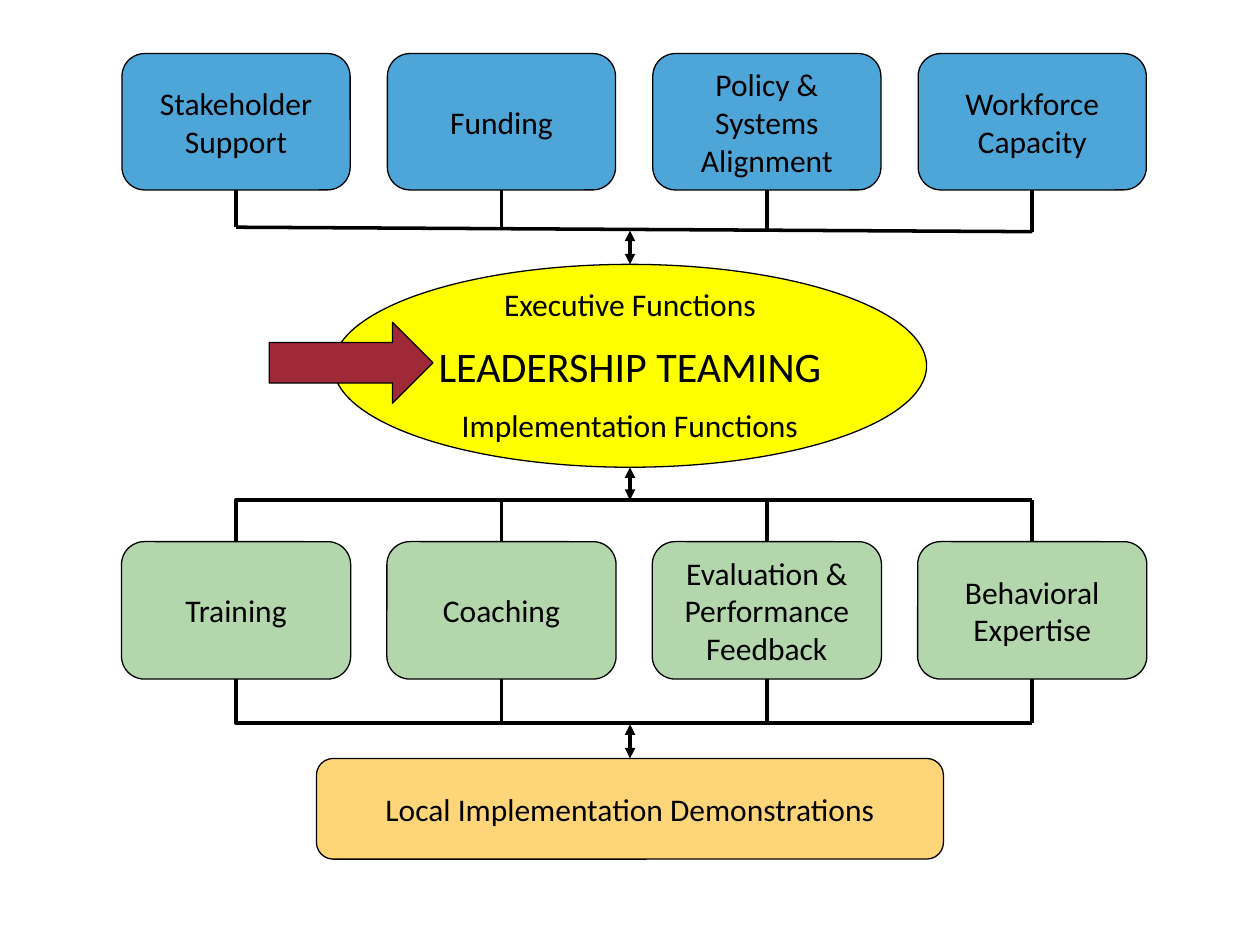
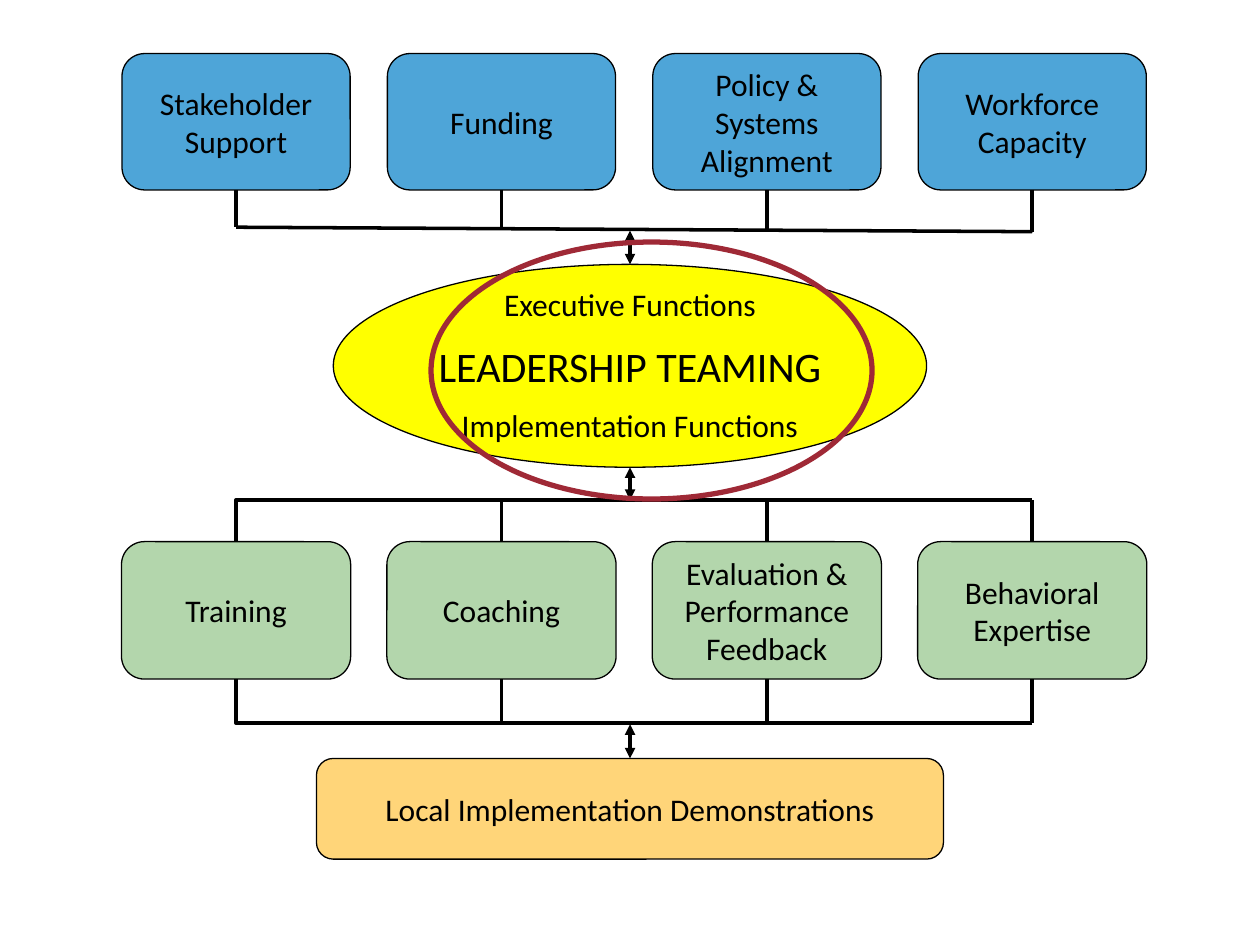
import dataclasses
import typing

import lxml.etree
import pptx
import pptx.dml.color
import pptx.enum.shapes
import pptx.enum.text
import pptx.oxml.ns
import pptx.util

Cm = pptx.util.Cm
Pt = pptx.util.Pt
Color = pptx.dml.color.RGBColor
Kind = pptx.enum.shapes.MSO_SHAPE
Link = pptx.enum.shapes.MSO_CONNECTOR
qn = pptx.oxml.ns.qn

BLACK = Color(0x00, 0x00, 0x00)
BLUE = Color(0x4E, 0xA5, 0xD8)
GREEN = Color(0xB3, 0xD6, 0xAC)
YELLOW = Color(0xFF, 0xFF, 0x00)
GOLD = Color(0xFF, 0xD5, 0x79)
RED = Color(0x9F, 0x29, 0x36)

FONT = "Calibri"
PITCH = 5.35
MID = 12.7
TOP, BOTTOM = 0, 2
FIRST_BUS = 4.58
TILT = 0.03
UPPER_BUS = 10.08
LOWER_BUS = 14.58


@dataclasses.dataclass(frozen=True)
class Box:
    left: float
    top: float
    width: float
    height: float
    kind: typing.Any = Kind.ROUNDED_RECTANGLE
    text: str = ""
    fill: typing.Optional[Color] = None
    line: typing.Optional[Color] = BLACK
    weight: float = 0.75
    size: int = 18


@dataclasses.dataclass(frozen=True)
class Row:
    left: float
    top: float
    width: float
    height: float
    fill: Color
    labels: typing.Tuple[str, ...]

    def boxes(self) -> typing.List[Box]:
        return [
            Box(self.left + PITCH * col, self.top, self.width, self.height,
                text=label, fill=self.fill)
            for col, label in enumerate(self.labels)
        ]


DRIVERS = Row(2.46, 1.08, 4.6, 2.75, BLUE, (
    "Stakeholder Support", "Funding",
    "Policy & Systems Alignment", "Workforce Capacity"))
SKILLS = Row(2.45, 10.92, 4.62, 2.77, GREEN, (
    "Training", "Coaching",
    "Evaluation & Performance Feedback", "Behavioral Expertise"))
TEAM = Box(6.72, 5.33, 11.96, 4.09, Kind.OVAL, "LEADERSHIP TEAMING",
           YELLOW, size=24)
LOCAL = Box(6.38, 15.29, 12.64, 2.03,
            text="Local Implementation Demonstrations", fill=GOLD)
ROLES = [
    Box(7.43, top, 10.54, 1.7, Kind.OVAL, text, line=None)
    for top, text in ((5.28, "Executive Functions"),
                      (7.72, "Implementation Functions"))
]
ARROW = Box(5.43, 6.5, 3.3, 1.63, Kind.RIGHT_ARROW, fill=RED)
RING = Box(8.69, 4.88, 8.89, 5.18, Kind.OVAL, line=RED, weight=3)


def add_box(slide: typing.Any, box: Box) -> typing.Any:
    shape = slide.shapes.add_shape(
        box.kind, Cm(box.left), Cm(box.top), Cm(box.width), Cm(box.height))
    shape.shadow.inherit = False
    if box.fill is None:
        shape.fill.background()
    else:
        shape.fill.solid()
        shape.fill.fore_color.rgb = box.fill
    if box.line is None:
        shape.line.fill.background()
    else:
        shape.line.color.rgb = box.line
        shape.line.width = Pt(box.weight)
    if box.text:
        frame = shape.text_frame
        frame.word_wrap = True
        frame.vertical_anchor = pptx.enum.text.MSO_ANCHOR.MIDDLE
        para = frame.paragraphs[0]
        para.alignment = pptx.enum.text.PP_ALIGN.CENTER
        run = para.add_run()
        run.text = box.text
        run.font.name = FONT
        run.font.size = Pt(box.size)
        run.font.color.rgb = BLACK
    return shape


def add_line(slide: typing.Any, start: typing.Tuple[float, float],
             end: typing.Tuple[float, float], heads: bool = False,
             kind: typing.Any = Link.STRAIGHT) -> typing.Any:
    line = slide.shapes.add_connector(kind, *map(Cm, start + end))
    line.line.color.rgb = BLACK
    line.line.width = Pt(2)
    props = line._element.spPr
    lxml.etree.SubElement(props, qn("a:effectLst"))
    if heads:
        for tag in ("a:headEnd", "a:tailEnd"):
            lxml.etree.SubElement(props.find(qn("a:ln")), qn(tag),
                                  type="triangle")
    return line


def add_elbow(slide: typing.Any, left: float, right: float,
              edge: float, bus: float) -> None:
    mid_x, mid_y = (left + right) / 2, (edge + bus) / 2
    half_w, half_h = abs(bus - edge) / 2, (right - left) / 2
    rises = bus < edge
    side = half_h if rises else -half_h
    line = add_line(slide, (mid_x + half_w, mid_y + side),
                    (mid_x - half_w, mid_y - side), kind=Link.ELBOW)
    line._element.spPr.find(qn("a:prstGeom")).set("prst", "bentConnector2")
    turn = 90 if rises else 270
    line._element.spPr.find(qn("a:xfrm")).set("rot", str(turn * 60000))


def add_stem(slide: typing.Any, shape: typing.Any, site: int,
             bus: float) -> None:
    x = (shape.left + shape.width / 2) / Cm(1)
    edge = shape.top + (shape.height if site == BOTTOM else 0)
    line = add_line(slide, (x, edge / Cm(1)), (x, bus))
    line.begin_connect(shape, site)


def add_chart_flow(slide: typing.Any) -> None:
    drivers = [add_box(slide, box) for box in DRIVERS.boxes()]
    team = add_box(slide, TEAM)
    skills = [add_box(slide, box) for box in SKILLS.boxes()]
    local = add_box(slide, LOCAL)

    for col, shape in enumerate(drivers):
        add_stem(slide, shape, BOTTOM, FIRST_BUS + TILT * col)
    first = DRIVERS.left + DRIVERS.width / 2
    last = first + 3 * PITCH
    add_line(slide, (last, FIRST_BUS + 3 * TILT), (first, FIRST_BUS))

    base = SKILLS.top + SKILLS.height
    for site, edge, bus in ((TOP, SKILLS.top, UPPER_BUS),
                            (BOTTOM, base, LOWER_BUS)):
        add_elbow(slide, first, last, edge, bus)
        for shape in skills[1:]:
            add_stem(slide, shape, site, bus)

    down = add_line(slide, (MID, 4.65), (MID, TEAM.top), heads=True)
    down.end_connect(team, TOP)
    add_line(slide, (MID, UPPER_BUS), (MID, TEAM.top + TEAM.height),
             heads=True)
    for role in ROLES:
        add_box(slide, role)
    link = add_line(slide, (MID, LOCAL.top), (MID, 14.6), heads=True)
    link.begin_connect(local, TOP)


def main() -> None:
    deck = pptx.Presentation()
    deck.slide_width, deck.slide_height = Cm(25.4), Cm(19.05)
    for mark in (ARROW, RING):
        slide = deck.slides.add_slide(deck.slide_layouts[6])
        add_chart_flow(slide)
        add_box(slide, mark)
    deck.save("out.pptx")


if __name__ == "__main__":
    main()
